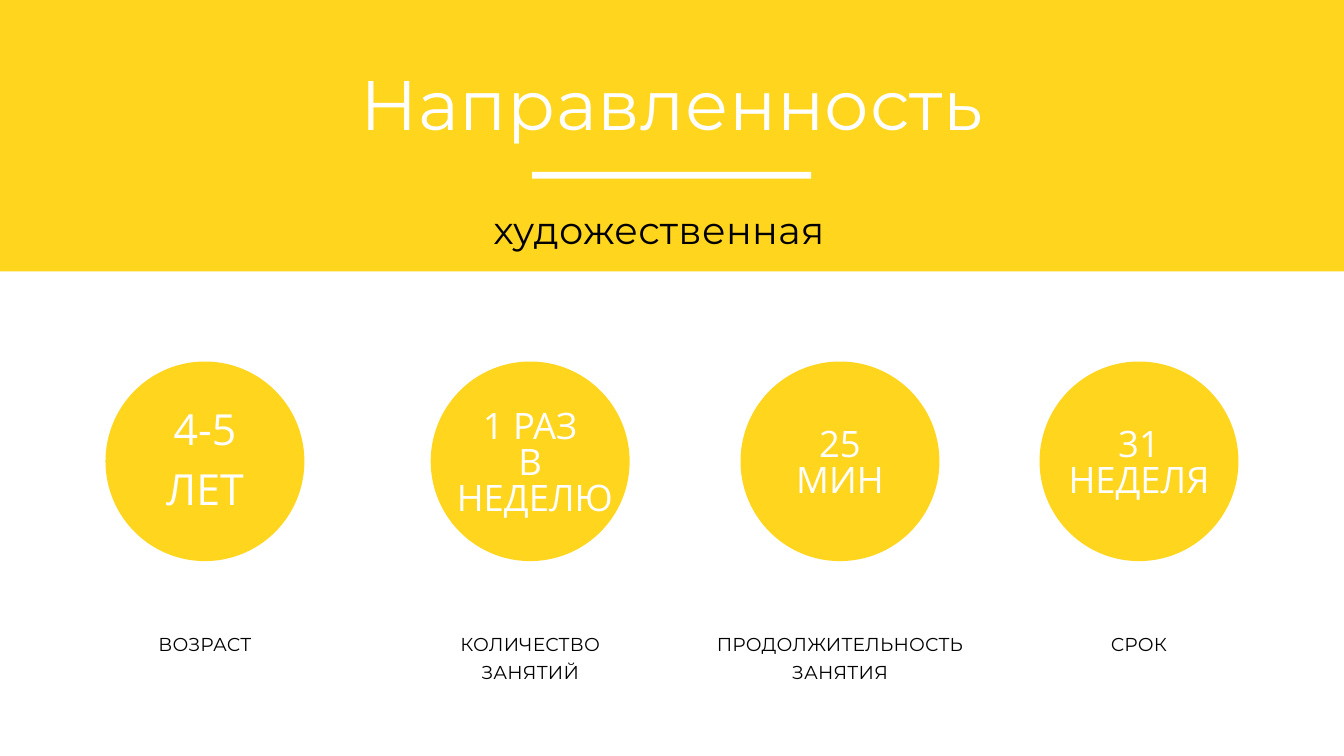
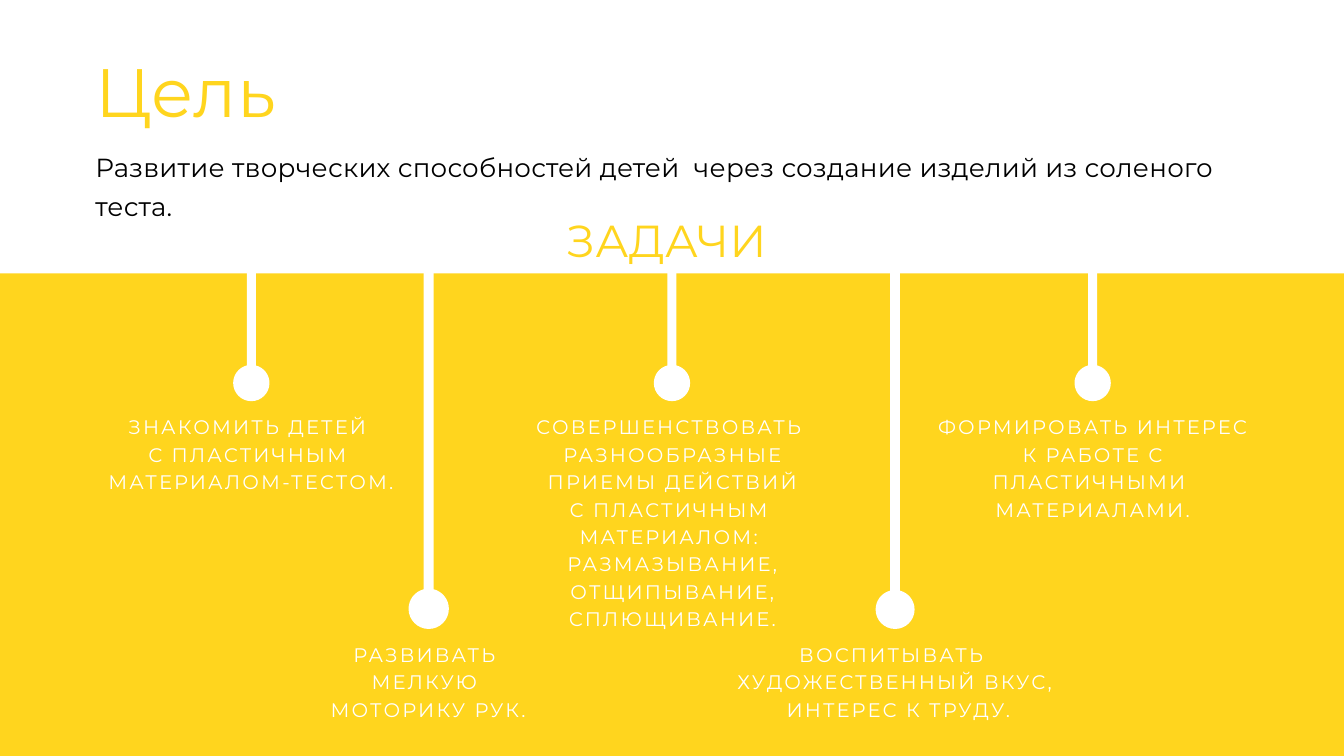
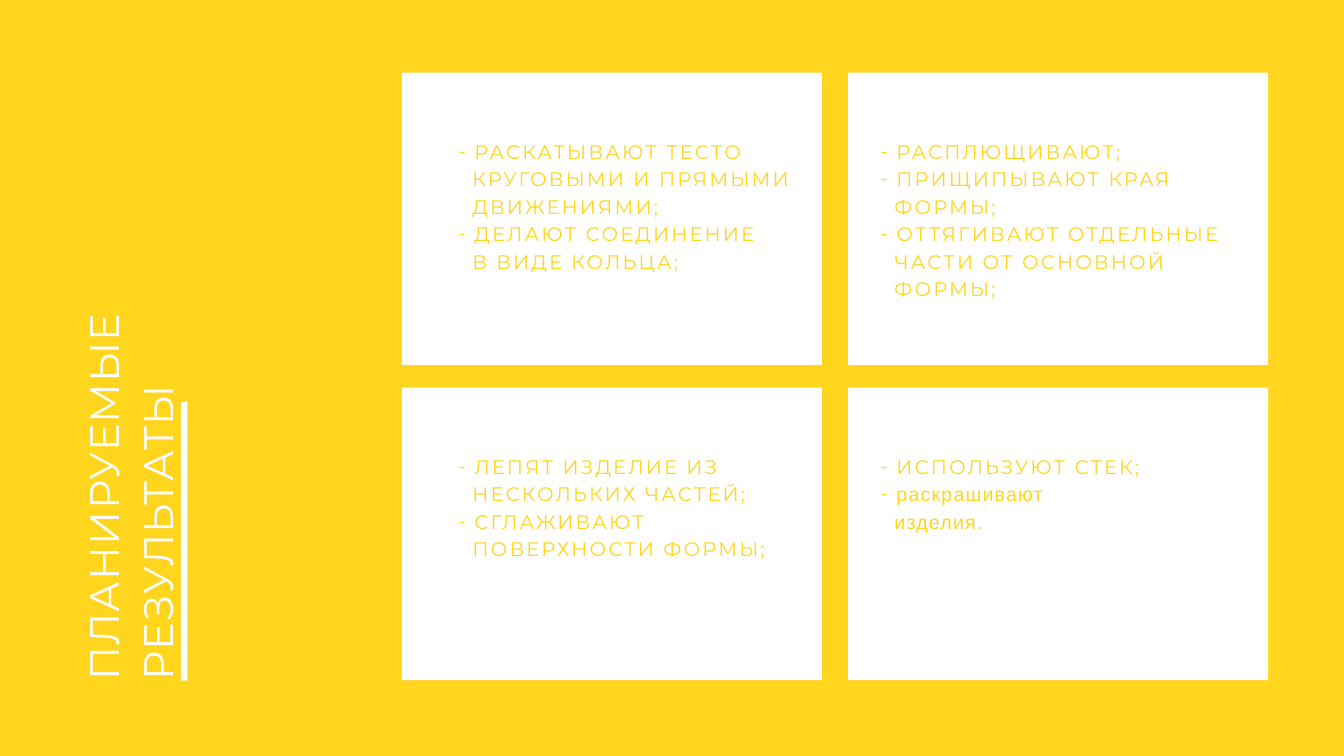
from collections import namedtuple
from itertools import pairwise
from math import asin, cos, pi, sin, tan

from lxml.etree import SubElement
from pptx import Presentation
from pptx.dml.color import RGBColor
from pptx.enum.shapes import MSO_SHAPE as Shape
from pptx.enum.text import MSO_ANCHOR as Anchor
from pptx.enum.text import MSO_AUTO_SIZE as AutoSize
from pptx.enum.text import PP_ALIGN as Align
from pptx.oxml.ns import qn
from pptx.util import Emu, Pt

SCALE = 9144
COLORS = {"yellow": "FFD51E", "white": "FFFFFF", "black": "000000"}
LAYOUTS = {"title_and_body": 1, "title_and_four": 4}
BAND_LEFT, BAND_WIDTH = -29, 2057
BULLET = "- "
BULLET_INDENT, WRAP_INDENT = 24, 21

Style = namedtuple("Style", "size leading color tracking align font",
                   defaults=(0, Align.CENTER, "Montserrat"))
HEADING = Style(75, 94.5, "white", 0.7)
SUBTITLE = Style(41, 61.5, "black", 0.4)
CAPTION = Style(20, 30, "black", 0.2)
VALUE = Style(39, 39, "white", font="Open Sans")
LARGE_VALUE = VALUE._replace(size=45.9, leading=64.2)
GOAL_TITLE = Style(73.3, 92.4, "yellow", 0.7, Align.LEFT)
GOAL = Style(28, 42, "black", 0.3, Align.LEFT)
TASKS_TITLE = Style(48, 60.5, "yellow", 0.4, Align.LEFT)
TASK = Style(21, 29.4, "white", 2.3)
RESULTS_TITLE = Style(44.2, 58, "white", 1.3, Align.LEFT)
RESULT = TASK._replace(color="yellow", align=Align.LEFT)
PLAIN_RESULT = RESULT._replace(tracking=1.3, font="Arial")


def px(value):
    return Emu(round(value * SCALE))


def rgb(name):
    return RGBColor.from_string(COLORS[name])


def add_page(deck, layout, background):
    page = deck.slides.add_slide(deck.slide_layouts[LAYOUTS[layout]])
    page.background.fill.solid()
    page.background.fill.fore_color.rgb = rgb(background)
    return page


def paint(shape, color):
    shape.shadow.inherit = False
    shape.fill.solid()
    shape.fill.fore_color.rgb = rgb(color)
    shape.line.fill.background()


def add_block(page, kind, area, color):
    paint(page.shapes.add_shape(kind, *map(px, area)), color)


def arc_points(center, middle, radius, start, end):
    pull = 4 / 3 * tan((end - start) / 4)
    for angle, reach in ((start, pull), (end, -pull), (end, 0)):
        yield (center + radius * (sin(angle) + reach * cos(angle)),
               middle - radius * (cos(angle) - reach * sin(angle)))


def bend_lines(shape, arc_count):
    lines = list(shape.element.iter(qn("a:lnTo")))
    for index in range(arc_count):
        first, *others = lines[3 * index:3 * index + 3]
        first.tag = qn("a:cubicBezTo")
        for line in others:
            first.append(line[0])
            line.getparent().remove(line)


def add_pin(page, center, top, bottom, radius):
    middle = bottom - radius
    half_stem = radius / 4
    joint = asin(half_stem / radius)
    angles = [joint, pi / 2, pi, 3 * pi / 2, 2 * pi - joint]
    outline = [(center + half_stem, middle - radius * cos(joint))]
    for start, end in pairwise(angles):
        outline.extend(arc_points(center, middle, radius, start, end))
    outline += [(center - half_stem, top), (center + half_stem, top)]
    first, *rest = [(px(x), px(y)) for x, y in outline]
    builder = page.shapes.build_freeform(*first)
    builder.add_line_segments(rest, close=True)
    pin = builder.convert_to_shape()
    bend_lines(pin, len(angles) - 1)
    paint(pin, "white")


def set_bullet(paragraph, style, bulleted, margin):
    properties = paragraph._p.get_or_add_pPr()
    properties.set("marL", str(px(margin)))
    properties.set("indent", str(-px(margin) if bulleted else 0))
    if bulleted:
        color = SubElement(properties, qn("a:buClr"))
        SubElement(color, qn("a:srgbClr"), val=COLORS[style.color])
        SubElement(properties, qn("a:buFont"), typeface="Montserrat")
        SubElement(properties, qn("a:buChar"), char=BULLET.strip())
    else:
        SubElement(properties, qn("a:buNone"))


def set_font(paragraph, style):
    font = paragraph.font
    font.name = style.font
    font.size = Pt(style.size)
    font.bold = False
    font.color.rgb = rgb(style.color)
    font._element.set("spc", str(round(style.tracking * 100)))


def format_paragraph(paragraph, style, bulleted, margin):
    set_bullet(paragraph, style, bulleted, margin)
    paragraph.alignment = style.align
    paragraph.line_spacing = Pt(style.leading)
    paragraph.space_before = paragraph.space_after = Pt(0)
    set_font(paragraph, style)


def write(box, area, lines, style, listed=False):
    box.left, box.top, box.width, box.height = map(px, area)
    box.element.getparent().append(box.element)
    frame = box.text_frame
    frame.margin_left = frame.margin_right = 0
    frame.margin_top = frame.margin_bottom = 0
    frame.word_wrap = True
    frame.auto_size = AutoSize.NONE
    frame.vertical_anchor = Anchor.TOP
    frame.text = "\n".join(line.removeprefix(BULLET) for line in lines)
    for paragraph, line in zip(frame.paragraphs, lines):
        bulleted = line.startswith(BULLET)
        margin = BULLET_INDENT if bulleted else WRAP_INDENT if listed else 0
        format_paragraph(paragraph, style, bulleted, margin)


def add_text(page, area, lines, style):
    write(page.shapes.add_textbox(0, 0, 0, 0), area, lines, style)


def add_fact(page, center, value_top, value, value_style, caption):
    add_block(page, Shape.OVAL, (center - 148, 538, 296, 297), "yellow")
    add_text(page, (center - 128, value_top, 256, 165), value, value_style)
    height = 38 + 42 * (len(caption) - 1)
    add_text(page, (center - 193, 933, 386, height), caption, CAPTION)


def build_direction(deck):
    page = add_page(deck, "title_and_body", "white")
    add_block(page, Shape.RECTANGLE, (BAND_LEFT, 0, BAND_WIDTH, 404), "yellow")
    write(page.shapes.title, (149, 84, 1702, 129), ["Направленность"], HEADING)
    add_block(page, Shape.RECTANGLE, (792, 256, 415, 10), "white")
    write(page.placeholders[1], (130, 290, 1702, 80), ["художественная"], SUBTITLE)
    facts = [
        (305, 586, ["4-5", "ЛЕТ"], LARGE_VALUE, ["ВОЗРАСТ"]),
        (789, 610, ["1 РАЗ", "В", " НЕДЕЛЮ"], VALUE, ["КОЛИЧЕСТВО", "ЗАНЯТИЙ"]),
        (1250, 637, ["25", "МИН"], VALUE, ["ПРОДОЛЖИТЕЛЬНОСТЬ", "ЗАНЯТИЯ"]),
        (1695, 637, ["31", "НЕДЕЛЯ"], VALUE, ["СРОК"]),
    ]
    for fact in facts:
        add_fact(page, *fact)


def build_goal(deck):
    page = add_page(deck, "title_and_body", "yellow")
    add_block(page, Shape.RECTANGLE, (BAND_LEFT, 0, BAND_WIDTH, 407), "white")
    pins = [(374, 364, 597, 27), (638, 390, 936, 30), (1000, 336, 597, 27),
            (1332, 372, 936, 29), (1626, 336, 597, 27)]
    for pin in pins:
        add_pin(page, *pin)
    write(page.shapes.title, (142, 67, 1664, 126), ["Цель"], GOAL_TITLE)
    goal = ("Развитие творческих способностей детей  через создание изделий "
            "из соленого теста.")
    write(page.placeholders[1], (142, 214, 1784, 101), [goal], GOAL)
    add_text(page, (843, 313, 314, 81), ["ЗАДАЧИ"], TASKS_TITLE)
    tasks = [
        ((155, 612, 437, 120),
         ["ЗНАКОМИТЬ ДЕТЕЙ ", "С ПЛАСТИЧНЫМ ", "МАТЕРИАЛОМ-ТЕСТОМ."]),
        ((486, 951, 302, 120), ["РАЗВИВАТЬ ", "МЕЛКУЮ ", "МОТОРИКУ РУК."]),
        ((793, 612, 415, 323),
         ["СОВЕРШЕНСТВОВАТЬ ", "РАЗНООБРАЗНЫЕ", " ПРИЕМЫ ДЕЙСТВИЙ ",
          "С ПЛАСТИЧНЫМ ", "МАТЕРИАЛОМ: ", "РАЗМАЗЫВАНИЕ,", " ОТЩИПЫВАНИЕ, ",
          "СПЛЮЩИВАНИЕ."]),
        ((1089, 951, 485, 120),
         ["ВОСПИТЫВАТЬ ", "ХУДОЖЕСТВЕННЫЙ ВКУС,", " ИНТЕРЕС К ТРУДУ."]),
        ((1391, 612, 470, 201),
         ["ФОРМИРОВАТЬ ИНТЕРЕС", " К РАБОТЕ С ", "ПЛАСТИЧНЫМИ ", "МАТЕРИАЛАМИ."]),
    ]
    for area, lines in tasks:
        add_text(page, area, lines, TASK)


def build_results(deck):
    page = add_page(deck, "title_and_four", "yellow")
    title = page.shapes.title
    write(title, (-264, 482, 904, 157), ["ПЛАНИРУЕМЫЕ РЕЗУЛЬТАТЫ"], RESULTS_TITLE)
    title.rotation = 270
    add_block(page, Shape.RECTANGLE, (269, 598, 10, 415), "white")
    results = [
        ["- РАСКАТЫВАЮТ ТЕСТО", "КРУГОВЫМИ И ПРЯМЫМИ", "ДВИЖЕНИЯМИ;",
         "- ДЕЛАЮТ СОЕДИНЕНИЕ", "В ВИДЕ КОЛЬЦА;"],
        ["- РАСПЛЮЩИВАЮТ;", "- ПРИЩИПЫВАЮТ КРАЯ", "ФОРМЫ;",
         "- ОТТЯГИВАЮТ ОТДЕЛЬНЫЕ", "ЧАСТИ ОТ ОСНОВНОЙ", "ФОРМЫ;"],
        ["- ЛЕПЯТ ИЗДЕЛИЕ ИЗ", "НЕСКОЛЬКИХ ЧАСТЕЙ;",
         "- СГЛАЖИВАЮТ", "ПОВЕРХНОСТИ ФОРМЫ;"],
        ["- ИСПОЛЬЗУЮТ СТЕК;", "- раскрашивают", "изделия."],
    ]
    for index, lines in enumerate(results):
        row, column = divmod(index, 2)
        top = 108 + 469 * row
        add_block(page, Shape.RECTANGLE, (598 + 664 * column, top, 625, 435), "white")
        box = page.placeholders[index + 1]
        write(box, ((682, 1310)[column], top + 94, 530, 323), lines, RESULT, True)
    for paragraph in box.text_frame.paragraphs[1:]:
        set_font(paragraph, PLAIN_RESULT)


def main():
    deck = Presentation()
    deck.slide_width, deck.slide_height = px(2000), px(1125)
    build_direction(deck)
    build_goal(deck)
    build_results(deck)
    deck.save("out.pptx")


if __name__ == "__main__":
    main()
